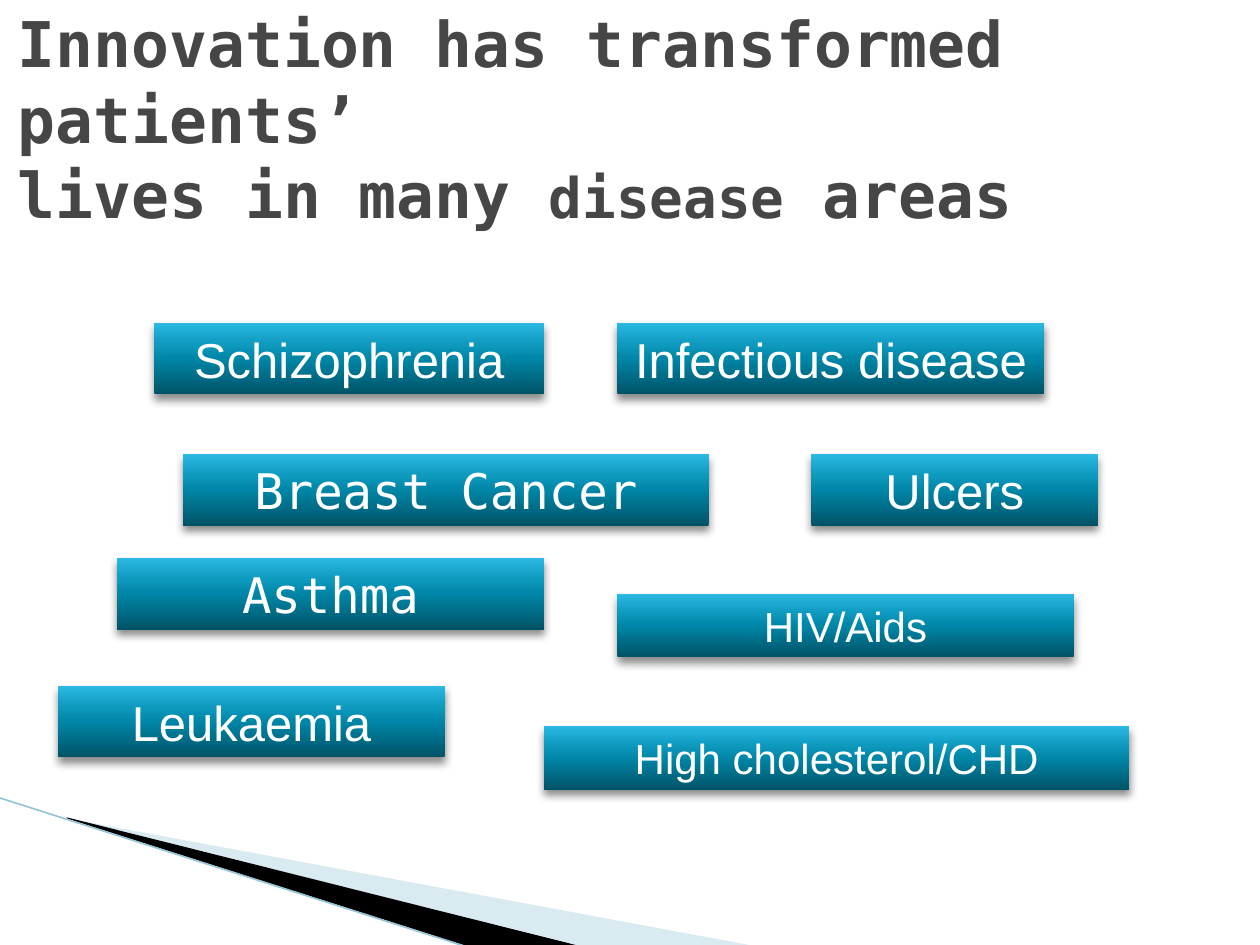
from dataclasses import dataclass

from lxml import etree
from pptx import Presentation
from pptx.dml.color import RGBColor
from pptx.enum.shapes import MSO_CONNECTOR, MSO_SHAPE
from pptx.enum.text import MSO_ANCHOR, MSO_AUTO_SIZE, PP_ALIGN
from pptx.oxml.ns import qn
from pptx.util import Pt

RECTANGLE = MSO_SHAPE.RECTANGLE
STRAIGHT = MSO_CONNECTOR.STRAIGHT
MIDDLE = MSO_ANCHOR.MIDDLE
CENTER = PP_ALIGN.CENTER
LEFT = PP_ALIGN.LEFT
NO_AUTOSIZE = MSO_AUTO_SIZE.NONE

TITLE_ONLY = 5
SANS = "Arial"
MONO = "DejaVu Sans Mono"
COLOURS = {
    "title": "464646",
    "label": "FFFFFF",
    "pale wedge": "A0CBDC",
    "dark wedge": "000000",
    "edge": "97C5D8",
    "shadow": "000000",
}
BAR_GRADIENT = [(0, "005367"), (50, "0086A7"), (70, "0E9ABE"), (100, "2CB9E3")]


@dataclass
class DiseaseBar:
    name: str
    left: float
    top: float
    width: float
    font: str = SANS
    size: int = 28

    @property
    def height(self) -> float:
        """One line of text plus the top and bottom insets."""
        return 41 if self.size == 28 else 36.2


@dataclass
class Wedge:
    colour: str
    points: list[tuple[float, float]]
    opacity: int = 100


BARS = [
    DiseaseBar("Ulcers", 463.6, 259.4, 164),
    DiseaseBar("Schizophrenia", 88.2, 184.4, 222.6),
    DiseaseBar("High cholesterol/CHD", 310.8, 415, 334.6, size=24),
    DiseaseBar("HIV/Aids", 352.8, 339.4, 260.8, size=24),
    DiseaseBar("Leukaemia", 33.2, 391.9, 221),
    DiseaseBar("Breast Cancer", 104.6, 259.4, 300.4, font=MONO),
    DiseaseBar("Asthma", 66.8, 318.8, 244, font=MONO),
    DiseaseBar("Infectious disease", 352.8, 184.4, 244),
]
WEDGES = [
    Wedge("pale wedge", [(39.6, 468.5), (428.4, 540.5), (328.3, 540.5), (39.6, 468)], 40),
    Wedge("dark wedge", [(38.2, 467.3), (329, 540.5), (267.8, 541), (38.9, 468)]),
]
TITLE_LINES = [
    [("Innovation has transformed patients’ ", 36)],
    [("lives in many ", 36), ("disease", 32), (" areas", 36)],
]


def rgb(name: str) -> RGBColor:
    return RGBColor.from_string(COLOURS[name])


def add_colour(parent, colour: str, opacity: int = 100) -> None:
    element = etree.SubElement(parent, qn("a:srgbClr"), val=colour)
    if opacity < 100:
        etree.SubElement(element, qn("a:alpha"), val=str(opacity * 1000))


def add_run(paragraph, text: str, font: str, size: int, colour: str, bold: bool = False) -> None:
    run = paragraph.add_run()
    run.text = text
    run.font.name = font
    run.font.size = Pt(size)
    run.font.bold = bold
    run.font.color.rgb = rgb(colour)


def draw_wedge(slide, wedge: Wedge) -> None:
    builder = slide.shapes.build_freeform(*wedge.points[0], scale=Pt(1))
    builder.add_line_segments(wedge.points[1:], close=True)
    shape = builder.convert_to_shape()
    shape.shadow.inherit = False
    shape.line.fill.background()
    shape.fill.solid()
    shape.fill.fore_color.rgb = rgb(wedge.colour)
    if wedge.opacity < 100:
        fill = shape._element.spPr.find(qn("a:solidFill"))
        fill.clear()
        add_colour(fill, COLOURS[wedge.colour], wedge.opacity)


def draw_edge(slide) -> None:
    """Thin line along the lower side of the wedges."""
    edge = slide.shapes.add_connector(STRAIGHT, Pt(-0.7), Pt(455.8), Pt(267.8), Pt(541.4))
    edge.line.color.rgb = rgb("edge")
    edge.line.width = Pt(0.95)
    etree.SubElement(edge._element.spPr, qn("a:effectLst"))


def write_title(slide) -> None:
    title = slide.shapes.title
    title.left, title.top, title.width, title.height = Pt(2.9), Pt(41.8), Pt(661.7), Pt(51.1)
    frame = title.text_frame
    frame.word_wrap = True
    frame.auto_size = NO_AUTOSIZE
    frame.vertical_anchor = MIDDLE
    paragraph = frame.paragraphs[0]
    paragraph.alignment = LEFT
    for index, line in enumerate(TITLE_LINES):
        if index:
            paragraph.add_line_break()
        for text, size in line:
            add_run(paragraph, text, MONO, size, "title", bold=True)


def style_bar(shape) -> None:
    """Vertical four-stop gradient, no outline, soft shadow below."""
    shape.line.fill.background()
    shape.fill.gradient()
    shape.fill.gradient_angle = 90
    properties = shape._element.spPr
    stops = properties.find(qn("a:gradFill")).find(qn("a:gsLst"))
    stops.clear()
    for position, colour in BAR_GRADIENT:
        add_colour(etree.SubElement(stops, qn("a:gs"), pos=str(position * 1000)), colour)
    shape.shadow.inherit = False
    shadow = etree.SubElement(
        properties.find(qn("a:effectLst")), qn("a:outerShdw"),
        blurRad=str(Pt(5)), dist=str(Pt(3)), dir=str(90 * 60000), rotWithShape="0",
    )
    add_colour(shadow, COLOURS["shadow"], 45)


def draw_bar(slide, bar: DiseaseBar) -> None:
    shape = slide.shapes.add_shape(
        RECTANGLE, Pt(bar.left), Pt(bar.top), Pt(bar.width), Pt(bar.height)
    )
    style_bar(shape)
    frame = shape.text_frame
    frame.word_wrap = True
    frame.vertical_anchor = MIDDLE
    paragraph = frame.paragraphs[0]
    paragraph.alignment = CENTER
    add_run(paragraph, bar.name, bar.font, bar.size, "label")


def main() -> None:
    presentation = Presentation()
    presentation.slide_width, presentation.slide_height = Pt(720), Pt(540)
    slide = presentation.slides.add_slide(presentation.slide_layouts[TITLE_ONLY])
    for wedge in WEDGES:
        draw_wedge(slide, wedge)
    draw_edge(slide)
    write_title(slide)
    for bar in BARS:
        draw_bar(slide, bar)
    presentation.save("out.pptx")


if __name__ == "__main__":
    main()
